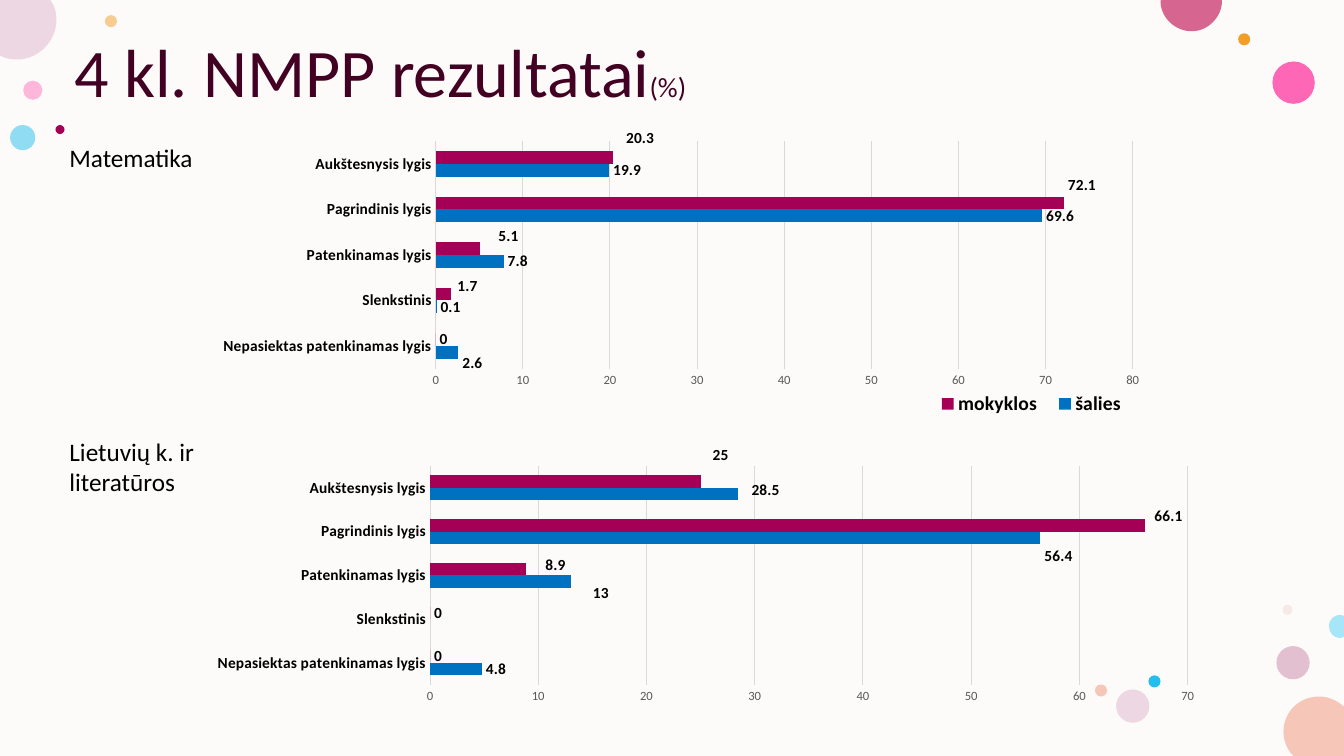
from lxml.etree import SubElement
from pptx import Presentation
from pptx.chart.data import CategoryChartData
from pptx.dml.color import RGBColor
from pptx.enum.chart import XL_CHART_TYPE, XL_LABEL_POSITION, XL_LEGEND_POSITION, XL_TICK_MARK
from pptx.enum.shapes import MSO_SHAPE
from pptx.enum.text import MSO_ANCHOR, MSO_AUTO_SIZE, PP_ALIGN
from pptx.oxml.ns import qn
from pptx.util import Inches, Pt

WIDE, HIGH = 13.33, 7.5
FACE = "Calibri"
CREAM = RGBColor(0xFD, 0xFB, 0xF9)
BLACK = RGBColor(0, 0, 0)
PLUM = RGBColor(0x42, 0x00, 0x23)
WINE = RGBColor(0xA4, 0x00, 0x56)
BLUE = RGBColor(0x00, 0x70, 0xC0)
GRAY = RGBColor(0x59, 0x59, 0x59)
GRID = RGBColor(0xD9, 0xD9, 0xD9)
PINK = RGBColor(0xFF, 0x75, 0xBD)
HOT = RGBColor(0xFF, 0x2F, 0x9C)
ROSE = RGBColor(0xD6, 0x65, 0x8F)
MAUVE = RGBColor(0xC9, 0x87, 0xA8)
LILAC = RGBColor(0xED, 0xD7, 0xE2)
DUST = RGBColor(0xE3, 0xBE, 0xBE)
PEACH = RGBColor(0xF6, 0xC7, 0xB9)
GOLD = RGBColor(0xF3, 0x9E, 0x29)
CYAN = RGBColor(0x24, 0xBE, 0xEE)
PALE = RGBColor(0xA7, 0xE5, 0xF8)

DOTS = [
    (0.23, 0.8, 0.19, PINK, 50), (1.04, 0.15, 0.12, GOLD, 50),
    (12.66, 6.41, 0.33, MAUVE, 50), (0.1, 1.24, 0.25, CYAN, 50),
    (12.62, 0.61, 0.42, HOT, 72), (12.28, 0.33, 0.12, GOLD, 100),
    (12.72, 6, 0.1, DUST, 28), (11.39, 6.7, 0.12, CYAN, 100),
    (11.07, 6.84, 0.33, LILAC, 100), (10.86, 6.79, 0.12, PEACH, 100),
    (0.55, 1.24, 0.09, WINE, 100),
]
CUT_DOTS = [
    (PEACH, [(13.08, 6.91), (13.18, 6.91, 13.26, 6.95, 13.33, 7.01), (13.33, 7.5),
             (12.83, 7.5), (12.81, 7.48), (12.76, 7.42, 12.73, 7.34, 12.73, 7.26),
             (12.73, 7.06, 12.89, 6.91, 13.08, 6.91)]),
    (LILAC, [(0, 0), (0.5, 0), (0.53, 0.05), (0.55, 0.09, 0.56, 0.14, 0.56, 0.2),
             (0.56, 0.41, 0.38, 0.59, 0.17, 0.59), (0.11, 0.59, 0.06, 0.58, 0.02, 0.56),
             (0, 0.55)]),
    (ROSE, [(11.52, 0), (12.12, 0), (12.12, 0.01), (12.12, 0.17, 11.98, 0.31, 11.82, 0.31),
            (11.65, 0.31, 11.51, 0.17, 11.51, 0.01)]),
    (PALE, [(13.29, 6.1), (13.33, 6.11), (13.33, 6.32), (13.29, 6.33),
            (13.23, 6.33, 13.18, 6.28, 13.18, 6.21), (13.18, 6.15, 13.23, 6.1, 13.29, 6.1)]),
]
TITLE = [("4 kl. NMPP rezultatai", 48.6), ("(%)", 19.8)]
NOTES = [
    ("Matematika", (0.59, 1.36, 1.44, 0.4), False),
    ("Lietuvių k. ir literatūros", (0.59, 4.28, 1.65, 0.71), True),
]
LEVELS = ["Nepasiektas patenkinamas lygis", "Slenkstinis", "Patenkinamas lygis",
          "Pagrindinis lygis", "Aukštesnysis lygis"]
CHARTS = [
    {"box": (2.03, 4.01, 9.98, 3.07), "top": 70, "plot": (22.4, 20, 75.3, 70.7),
     "legend": None,
     "rows": [
         ("Series 1", BLUE, (4.8, None, 13, 56.4, 28.5),
          {2: (1.8, 3.9), 3: (0, 6.1), 4: (0.9, -1.2)}),
         ("Series 2", WINE, (0, 0, 8.9, 66.1, 25),
          {2: (1.5, -1.2), 3: (0.5, -3), 4: (0.8, -8.4)})]},
    {"box": (2.03, 1.28, 9.47, 3), "top": 80, "plot": (24.2, 4, 73, 75.3),
     "legend": (75.6, 84.9, 22, 12),
     "rows": [
         ("šalies", BLUE, (2.6, 0.1, 7.8, 69.6, 19.9), {0: (0, 3.4)}),
         ("mokyklos", WINE, (0, 1.7, 5.1, 72.1, 20.3),
          {1: (0.3, -2.5), 2: (1.5, -4), 3: (0, -5.9), 4: (1, -6.3)})]},
]
LEAD_NS = "http://schemas.microsoft.com/office/drawing/2012/chart"
LEAD_ID = "{CE6537A1-D6FC-4f65-9D91-7224C49458BB}"


def style(item, **form):
    for key, val in form.items():
        setattr(item, key, val)


def write(font, size, color, bold=False):
    style(font, name=FACE, size=Pt(size), bold=bold)
    font.color.rgb = color


def paint(dot, color, alpha=100):
    dot.shadow.inherit = False
    dot.fill.solid()
    dot.fill.fore_color.rgb = color
    dot.line.fill.background()
    if alpha < 100:
        tone = dot.element.spPr.find(qn("a:solidFill"))[0]
        SubElement(tone, qn("a:alpha"), val=str(alpha * 1000))


def carve(slide, color, steps):
    ends = [(Inches(s[-2]), Inches(s[-1])) for s in steps]
    pen = slide.shapes.build_freeform(*ends[0])
    pen.add_line_segments(ends[1:], close=True)
    dot = pen.convert_to_shape()
    lines = dot.element.findall(".//" + qn("a:lnTo"))
    for line, step in zip(lines, steps[1:]):
        if len(step) == 6:
            curve = SubElement(line.getparent(), qn("a:cubicBezTo"))
            for x, y in zip(step[::2], step[1::2]):
                SubElement(curve, qn("a:pt"), x=str(Inches(x) - dot.left),
                           y=str(Inches(y) - dot.top))
            line.getparent().replace(line, curve)
    paint(dot, color)


def place(node, spot, index, inner=False):
    for old in node.findall(qn("c:layout")):
        node.remove(old)
    frame = SubElement(node, qn("c:layout"))
    node.insert(index, frame)
    man = SubElement(frame, qn("c:manualLayout"))
    if inner:
        SubElement(man, qn("c:layoutTarget"), val="inner")
    if len(spot) == 4:
        for key in ("xMode", "yMode"):
            SubElement(man, qn("c:" + key), val="edge")
    for key, val in zip("xywh", spot):
        SubElement(man, qn("c:" + key), val=f"{val / 100:.3f}")


def unlead(node):
    for tags in node.findall(qn("c:dLbls")):
        for lead in tags.findall(qn("c:showLeaderLines")):
            lead.set("val", "0")
        ext = SubElement(SubElement(tags, qn("c:extLst")), qn("c:ext"), uri=LEAD_ID)
        SubElement(ext, f"{{{LEAD_NS}}}showLeaderLines", nsmap={"c15": LEAD_NS}, val="0")


def draw(slide, item):
    data = CategoryChartData()
    data.categories = LEVELS
    for name, color, vals, moves in item["rows"]:
        data.add_series(name, vals)
    box = map(Inches, item["box"])
    chart = slide.shapes.add_chart(XL_CHART_TYPE.BAR_CLUSTERED, *box, data).chart
    style(chart, has_title=False, has_legend=bool(item["legend"]))
    write(chart.font, 10, BLACK)
    plot = chart.plots[0]
    style(plot, gap_width=150, overlap=0, vary_by_categories=False)
    cat, val = chart.category_axis, chart.value_axis
    for axis in (cat, val):
        style(axis, major_tick_mark=XL_TICK_MARK.NONE, minor_tick_mark=XL_TICK_MARK.NONE)
        axis.format.line.fill.background()
    write(cat.tick_labels.font, 11, BLACK, True)
    write(val.tick_labels.font, 9, GRAY)
    style(val, minimum_scale=0, maximum_scale=item["top"], major_unit=10,
          has_major_gridlines=True)
    line = val.major_gridlines.format.line
    line.color.rgb = GRID
    line.width = Pt(0.75)
    place(chart.element.find(".//" + qn("c:plotArea")), item["plot"], 0, True)
    if item["legend"]:
        style(chart.legend, position=XL_LEGEND_POSITION.BOTTOM, include_in_layout=False)
        write(chart.legend.font, 14, BLACK, True)
        place(chart.element.find(".//" + qn("c:legend")), item["legend"], 1)
    nodes = chart.element.findall(".//" + qn("c:ser"))
    for bars, node, (name, color, vals, moves) in zip(plot.series, nodes, item["rows"]):
        bars.format.fill.solid()
        bars.format.fill.fore_color.rgb = color
        bars.invert_if_negative = False
        tags = bars.data_labels
        style(tags, show_value=True, position=XL_LABEL_POSITION.OUTSIDE_END)
        write(tags.font, 11, BLACK, True)
        for i in moves:
            tag = bars.points[i].data_label
            write(tag.font, 11, BLACK, True)
            tag.position = XL_LABEL_POSITION.OUTSIDE_END
        for tag, i in zip(node.findall(".//" + qn("c:dLbl")), sorted(moves)):
            place(tag, moves[i], 1)
        unlead(node)


def main():
    deck = Presentation()
    style(deck, slide_width=Inches(WIDE), slide_height=Inches(HIGH))
    slide = deck.slides.add_slide(deck.slide_layouts[5])
    title = slide.shapes.title

    page = slide.shapes.add_shape(MSO_SHAPE.RECTANGLE, 0, 0, Inches(WIDE), Inches(HIGH))
    paint(page, CREAM)
    for x, y, size, color, alpha in DOTS:
        spot = map(Inches, (x, y, size, size))
        paint(slide.shapes.add_shape(MSO_SHAPE.OVAL, *spot), color, alpha)
    for color, steps in CUT_DOTS:
        carve(slide, color, steps)

    title.element.getparent().append(title.element)
    style(title, left=Inches(0.64), top=Inches(0.37), width=Inches(11.66), height=Inches(0.75))
    style(title.text_frame, vertical_anchor=MSO_ANCHOR.MIDDLE, word_wrap=True,
          auto_size=MSO_AUTO_SIZE.NONE)
    para = title.text_frame.paragraphs[0]
    style(para, alignment=PP_ALIGN.LEFT, line_spacing=0.9)
    for text, size in TITLE:
        run = para.add_run()
        run.text = text
        write(run.font, size, PLUM)

    for text, box, wrap in NOTES:
        frame = slide.shapes.add_textbox(*map(Inches, box)).text_frame
        style(frame, word_wrap=wrap, auto_size=MSO_AUTO_SIZE.SHAPE_TO_FIT_TEXT)
        run = frame.paragraphs[0].add_run()
        run.text = text
        write(run.font, 18, BLACK)

    for item in CHARTS:
        draw(slide, item)
    deck.save("out.pptx")


if __name__ == "__main__":
    main()
